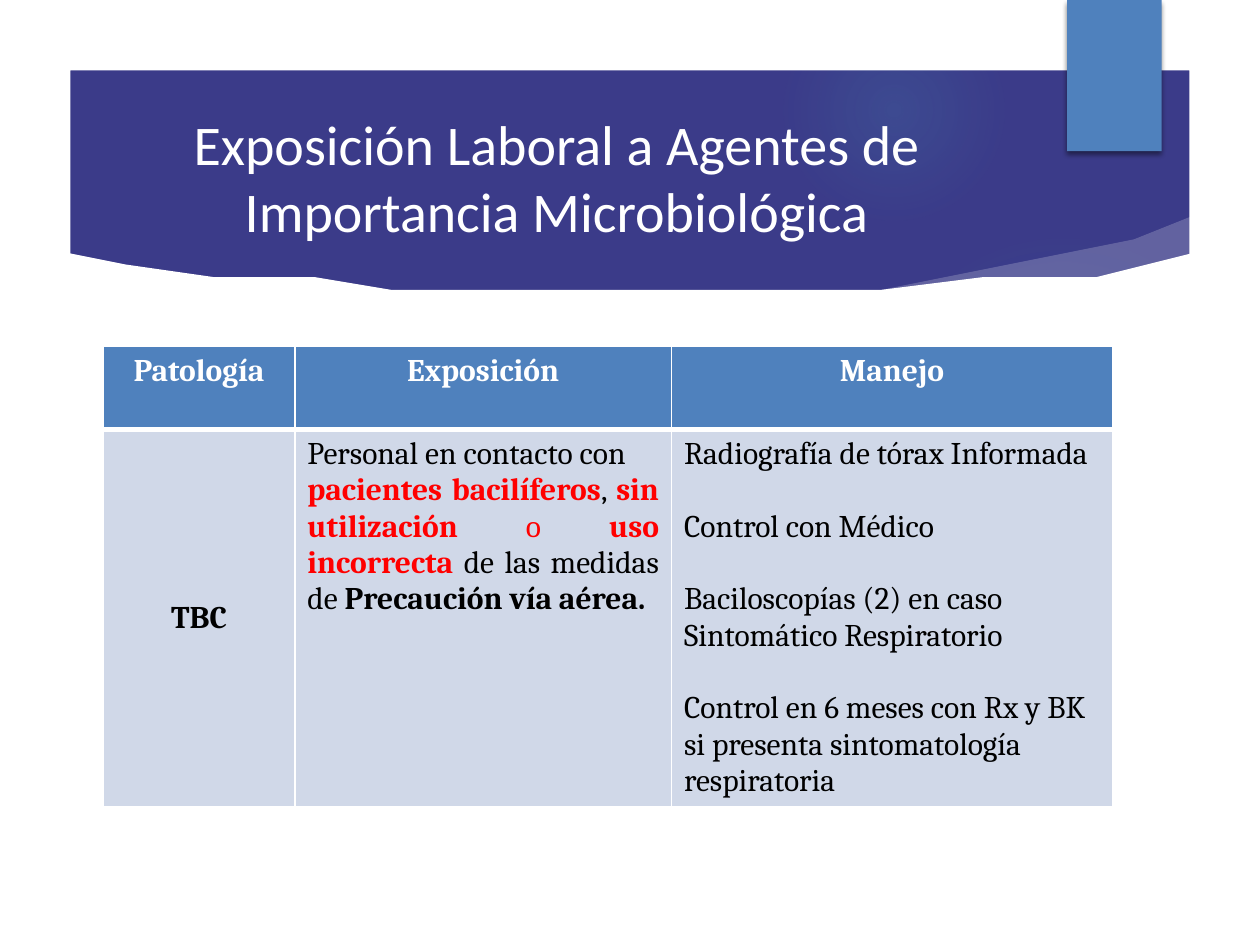
from pptx import Presentation
from pptx.dml.color import RGBColor as RGB
from pptx.enum.shapes import MSO_SHAPE as Shape
from pptx.enum.text import MSO_ANCHOR as Anchor, MSO_AUTO_SIZE as Fit, PP_ALIGN as Align
from pptx.oxml import parse_xml
from pptx.util import Inches, Pt

NS = 'xmlns:a="http://schemas.openxmlformats.org/drawingml/2006/main"'
NAVY, BLUE, PALE, WHITE, BLACK, RED = "3B3B89", "4F81BD", "D0D8E8", "FFFFFF", "000000", "FF0000"


def hue(code):
    return RGB.from_string(code)


def box(*cells):
    # The slide is a grid of 100 columns by 75 rows
    return [int(n * unit) for n in cells]


unit = Inches(0.1)
deck = Presentation()
deck.slide_width, deck.slide_height = box(100, 75)
slide = deck.slides.add_slide(deck.slide_layouts[5])
shapes = slide.shapes
slide.background.fill.solid()
slide.background.fill.fore_color.rgb = hue(NAVY)

# Soft round glows
for left, top, size, stops in [
    (68.9, 18.3, 30.8, [(0, 7), (36, 6), (69, 0)]),
    (62.2, 0, 17.5, [(0, 14), (36, 7), (73, 0)]),
]:
    glow = shapes.add_shape(Shape.OVAL, *box(left, top, size, size))
    glow.shadow.inherit = False
    glow.line.fill.background()
    glow.fill.solid()
    marks = "".join(
        f'<a:gs pos="{pos}000"><a:srgbClr val="4BACC6"><a:alpha val="{alpha}000"/></a:srgbClr></a:gs>'
        for pos, alpha in stops)
    blend = parse_xml(
        f'<a:gradFill {NS}><a:gsLst>{marks}</a:gsLst><a:path path="circle">'
        '<a:fillToRect l="50000" t="50000" r="50000" b="50000"/></a:path></a:gradFill>')
    props = glow.fill._xPr
    props.replace(props.solidFill, blend)

# Pale swoosh, then the white page with its curved top edge
swoosh = [(69.6, 22.9), (74.7, 22.3), (80.1, 21.3), (85, 20.3), (90.1, 19), (95.1, 17.4),
          (95.6, 20.8), (89, 21.8), (82, 22.6), (75, 23.3), (69.9, 23.4)]
page = [(5.3, 20.3), (9.9, 20.9), (17.3, 21.7), (24.9, 22.4), (30.7, 22.8), (37.1, 23.1),
        (43.9, 23.4), (54.8, 23.4), (62.5, 23.3), (70.4, 22.9), (78.5, 22.4), (86.6, 21.5),
        (94.7, 20.3), (94.7, 69.9), (5.3, 69.9)]
for dots, alpha in [(swoosh, 20), (page, 100)]:
    path = shapes.build_freeform(*dots[0], scale=unit)
    path.add_line_segments(dots[1:])
    form = path.convert_to_shape()
    form.shadow.inherit = False
    form.line.fill.background()
    form.fill.solid()
    form.fill.fore_color.rgb = hue(WHITE)
    if alpha < 100:
        form.fill._xPr.solidFill[0].append(parse_xml(f'<a:alpha {NS} val="{alpha}000"/>'))

# White frame and blue tab
frame = shapes.add_shape(Shape.FRAME, *box(0, 0, 100, 75))
frame.adjustments[0] = 5.6 / 75
tab = shapes.add_shape(Shape.RECTANGLE, *box(84.7, 0, 7.5, 12))
for part, code in [(frame, WHITE), (tab, BLUE)]:
    part.shadow.inherit = False
    part.line.fill.background()
    part.fill.solid()
    part.fill.fore_color.rgb = hue(code)
tab.fill._xPr.effectLst.append(parse_xml(
    f'<a:outerShdw {NS} blurRad="{Pt(3)}" dist="{Pt(2)}" dir="5400000" rotWithShape="0">'
    '<a:srgbClr val="000000"><a:alpha val="45000"/></a:srgbClr></a:outerShdw>'))

# Title, lifted above the banner
title = shapes.title
title.left, title.top, title.width, title.height = box(9.5, 10.1, 69.4, 7.8)
shapes._spTree.append(title._element)
text = title.text_frame
text.text = "Exposición Laboral a Agentes de Importancia Microbiológica"
text.word_wrap = True
text.auto_size = Fit.NONE
text.vertical_anchor = Anchor.MIDDLE
text.paragraphs[0].alignment = Align.CENTER
font = text.paragraphs[0].runs[0].font
font.name, font.size, font.color.rgb = "Calibri", Pt(32), hue(WHITE)

# Table: each cell is a list of paragraphs, each paragraph a list of (words, colour, bold)
heads = [[[(word, WHITE, True)]] for word in ("Patología", "Exposición", "Manejo")]
risk = [
    [("Personal en contacto con", BLACK, False)],
    [("pacientes bacilíferos", RED, True), (", ", BLACK, False), ("sin utilización", RED, True),
     (" o ", RED, False), ("uso incorrecta ", RED, True), ("de las medidas de ", BLACK, False),
     ("Precaución vía aérea.", BLACK, True)],
]
care = [[(line, BLACK, False)] for line in (
    "Radiografía de tórax Informada",
    "Control con Médico",
    "Baciloscopías (2) en caso Sintomático Respiratorio",
    "Control en 6 meses con Rx y BK si presenta sintomatología respiratoria",
)]
rows = [heads, [[[("TBC", BLACK, True)]], risk, care]]
sides = [Align.CENTER, Align.JUSTIFY, Align.LEFT]

grid = shapes.add_table(2, 3, *box(8.2, 27.5, 80.1, 36.5)).table
for col, wide in zip(grid.columns, box(15.2, 29.9, 35)):
    col.width = wide
for row, high in zip(grid.rows, box(6.6, 29.9)):
    row.height = high

for r, row in enumerate(rows):
    for c, paras in enumerate(row):
        cell = grid.cell(r, c)
        if r and c == 0:
            cell.vertical_anchor = Anchor.MIDDLE
        props = cell._tc.get_or_add_tcPr()
        for edge in "LRTB":
            thick = 3 if (r, edge) in [(0, "B"), (1, "T")] else 1
            props.append(parse_xml(
                f'<a:ln{edge} {NS} w="{Pt(thick)}"><a:solidFill><a:srgbClr val="{WHITE}"/>'
                f'</a:solidFill></a:ln{edge}>'))
        cell.fill.solid()
        cell.fill.fore_color.rgb = hue(PALE if r else BLUE)
        for n, runs in enumerate(paras):
            frame = cell.text_frame
            para = frame.add_paragraph() if n else frame.paragraphs[0]
            para.alignment = sides[c] if r else Align.CENTER
            if n and c == 2:
                para.space_before = Pt(20.8)
            for words, code, bold in runs:
                run = para.add_run()
                run.text = words
                font = run.font
                font.name, font.size, font.bold = "Cambria", Pt(18), bold
                font.color.rgb = hue(code)

deck.save("out.pptx")
